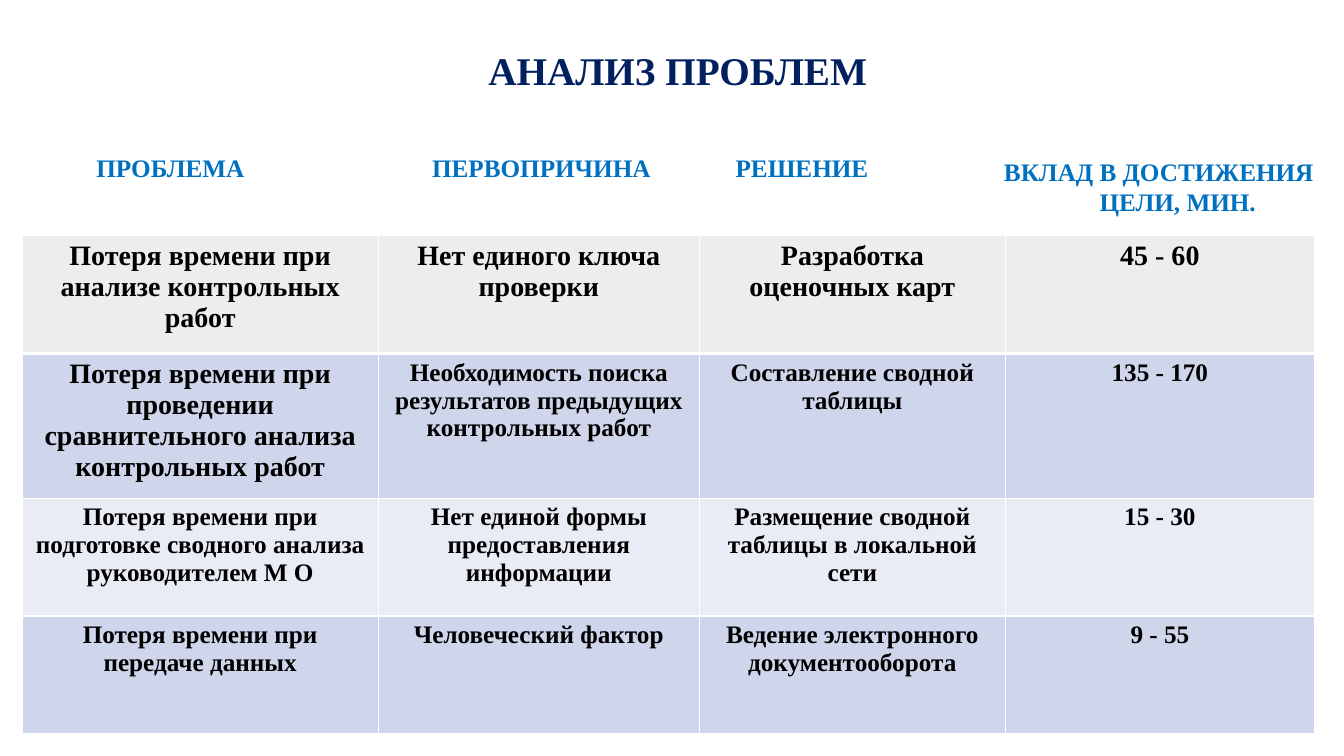
import pptx
import pptx.dml.color
import pptx.enum.text
import pptx.oxml
import pptx.oxml.ns
import pptx.util
from pptx.util import Cm

RGBColor = pptx.dml.color.RGBColor
ALIGN = pptx.enum.text.PP_ALIGN

NAVY = RGBColor(0x00, 0x20, 0x60)
BLUE = RGBColor(0x00, 0x70, 0xC0)
BLACK = RGBColor(0x00, 0x00, 0x00)
WHITE = RGBColor(0xFF, 0xFF, 0xFF)
GREY = RGBColor(0xED, 0xED, 0xED)
BAND_DARK = RGBColor(0xCF, 0xD5, 0xEA)
BAND_LIGHT = RGBColor(0xE9, 0xEB, 0xF5)


class AnalysisSlide:
    font = "Times New Roman"

    def __init__(self, deck):
        self.slide = deck.slides.add_slide(deck.slide_layouts[6])

    def add_text(self, paragraph, text, size, color, align):
        paragraph.alignment = align
        run = paragraph.add_run()
        run.text = text
        run.font.name = self.font
        run.font.size = pptx.util.Pt(size)
        run.font.bold = True
        run.font.color.rgb = color

    def label(self, lines, left, top, width, height, size, color, align=ALIGN.LEFT):
        frame = self.slide.shapes.add_textbox(
            Cm(left), Cm(top), Cm(width), Cm(height)).text_frame
        frame.word_wrap = True
        for i, line in enumerate(lines):
            paragraph = frame.add_paragraph() if i else frame.paragraphs[0]
            self.add_text(paragraph, line, size, color, align)
        return frame

    def border(self, cell, top, bottom):
        properties = cell._tc.get_or_add_tcPr()
        sides = {"lnL": 1, "lnR": 1, "lnT": top, "lnB": bottom}
        for i, (side, width) in enumerate(sides.items()):
            properties.insert(i, pptx.oxml.parse_xml(
                f'<a:{side} {pptx.oxml.ns.nsdecls("a")} w="{pptx.util.Pt(width)}">'
                f'<a:solidFill><a:srgbClr val="{WHITE}"/></a:solidFill></a:{side}>'))

    def table(self, rows, left, top, widths, heights, fills):
        table = self.slide.shapes.add_table(
            len(rows), len(widths), Cm(left), Cm(top),
            Cm(sum(widths)), Cm(sum(heights))).table
        for column, width in zip(table.columns, widths):
            column.width = Cm(width)
        for r, texts in enumerate(rows):
            table.rows[r].height = Cm(heights[r])
            for c, text in enumerate(texts):
                cell = table.cell(r, c)
                cell.fill.solid()
                cell.fill.fore_color.rgb = fills[r]
                # A thick line separates the first row from the rest
                self.border(cell, 3 if r == 1 else 1, 3 if r == 0 else 1)
                size = 20 if r == 0 or (r, c) == (1, 0) else 18
                self.add_text(cell.text_frame.paragraphs[0], text, size, BLACK, ALIGN.CENTER)


PROBLEMS = [
    ("Потеря времени при анализе контрольных работ", "Нет единого ключа проверки",
     "Разработка оценочных карт", "45 - 60"),
    ("Потеря времени при проведении сравнительного анализа контрольных работ",
     "Необходимость поиска результатов предыдущих контрольных работ",
     "Составление сводной таблицы", "135 - 170"),
    ("Потеря времени при подготовке сводного анализа руководителем М О",
     "Нет единой формы предоставления информации",
     "Размещение сводной таблицы в локальной сети", "15 - 30"),
    ("Потеря времени при передаче данных", "Человеческий фактор",
     "Ведение электронного документооборота", "9 - 55"),
]


def main():
    deck = pptx.Presentation()
    deck.slide_width, deck.slide_height = Cm(33.87), Cm(19.05)
    page = AnalysisSlide(deck)

    # Title
    page.label(["АНАЛИЗ ПРОБЛЕМ"], 10.64, 1.04, 12.88, 1.45, 28, NAVY, ALIGN.CENTER)

    # Column headings
    for heading, left, width in [("ПРОБЛЕМА", 2.18, 4.45),
                                 ("ПЕРВОПРИЧИНА", 10.64, 6.3),
                                 ("РЕШЕНИЕ", 18.29, 4.47)]:
        page.label([heading], left, 3.71, width, 1.02, 18, BLUE)
    contribution = page.label(["ВКЛАД В ДОСТИЖЕНИЯ", "ЦЕЛИ, МИН."],
                              25.04, 3.81, 8.81, 1.8, 18, BLUE, ALIGN.CENTER)
    contribution.margin_left, contribution.margin_right = Cm(0), Cm(0.48)
    # The second line sits slightly to the right of the first
    contribution.paragraphs[1]._p.get_or_add_pPr().set("marL", str(Cm(0.95)))

    # Problem table
    page.table(PROBLEMS, 0.56, 5.94, [8.97, 8.1, 7.7, 7.8], [2.97, 3.63, 2.97, 2.97],
               [GREY, BAND_DARK, BAND_LIGHT, BAND_DARK])

    deck.save("out.pptx")


if __name__ == "__main__":
    main()
